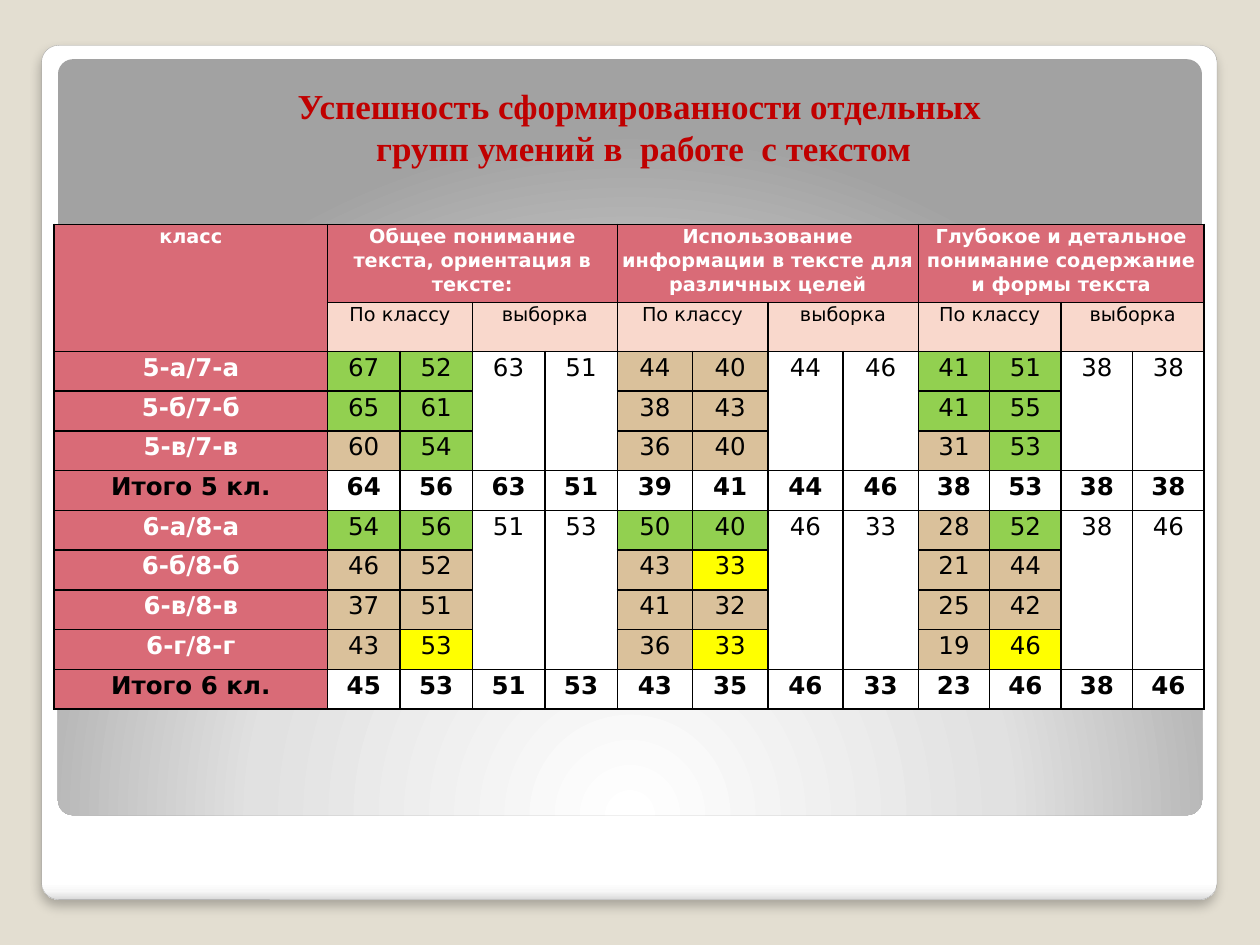
import pptx
import pptx.dml.color
import pptx.enum.shapes
import pptx.enum.text
import pptx.oxml
import pptx.oxml.ns
import pptx.util

Inches = pptx.util.Inches
CENTER = pptx.enum.text.PP_ALIGN.CENTER
COLORS = {
    "page": "E3DED1", "edge": "A4A4A4", "title": "C00000",
    "rose": "D96B77", "pale": "F9D8CC", "white": "FFFFFF", "black": "000000",
    "green": "92D050", "tan": "DAC19B", "yellow": "FFFF00",
}
RGB = {name: pptx.dml.color.RGBColor.from_string(code) for name, code in COLORS.items()}
NAMESPACE = pptx.oxml.ns.nsdecls("a")


def add_panel(page, left, top, width, height, stops, direction):
    panel = page.shapes.add_shape(
        pptx.enum.shapes.MSO_SHAPE.ROUNDED_RECTANGLE,
        Inches(left), Inches(top), Inches(width), Inches(height))
    panel.adjustments[0] = 0.02
    panel.shadow.inherit = False
    panel.line.fill.background()
    panel.fill.background()
    stop_xml = "".join(
        f'<a:gs pos="{position * 1000}"><a:srgbClr val="{color}"/></a:gs>'
        for position, color in stops)
    gradient = pptx.oxml.parse_xml(
        f'<a:gradFill {NAMESPACE} rotWithShape="1"><a:gsLst>{stop_xml}</a:gsLst>{direction}</a:gradFill>')
    properties = panel.element.spPr
    properties.replace(properties.find(pptx.oxml.ns.qn("a:noFill")), gradient)
    return panel


def write_cell(cell, text, fill, size, color="black", bold=False):
    cell.fill.solid()
    cell.fill.fore_color.rgb = RGB[fill]
    cell.margin_left = cell.margin_right = Inches(0.01)
    cell.margin_top = cell.margin_bottom = 0
    cell.text = text
    para = cell.text_frame.paragraphs[0]
    para.alignment = CENTER
    para.line_spacing = 1.07
    para.font.name = "DejaVu Sans"
    para.font.size = pptx.util.Pt(size)
    para.font.bold = bold
    para.font.color.rgb = RGB[color]


deck = pptx.Presentation()
deck.slide_width = Inches(10)
deck.slide_height = Inches(7.5)
page = deck.slides.add_slide(deck.slide_layouts[5])
page.background.fill.solid()
page.background.fill.fore_color.rgb = RGB["page"]

card = add_panel(
    page, 0.33, 0.36, 9.33, 6.78,
    [(0, "FFFFFF"), (98, "FFFFFF"), (99, "F7F7F7"), (100, "DADADA")],
    '<a:lin ang="5400000" scaled="0"/>')
card.line.color.rgb = RGB["edge"]
card.line.width = pptx.util.Pt(0.16)
card.element.spPr.find(pptx.oxml.ns.qn("a:effectLst")).append(pptx.oxml.parse_xml(
    f'<a:outerShdw {NAMESPACE} blurRad="76200" dist="50800" dir="5400000" rotWithShape="0">'
    '<a:srgbClr val="000000"><a:alpha val="25000"/></a:srgbClr></a:outerShdw>'))
add_panel(
    page, 0.46, 0.47, 9.08, 6,
    [(0, "FFFFFF"), (55, "E1E1E1"), (100, "A2A2A2")],
    '<a:path path="circle"><a:fillToRect l="50000" t="175000" r="50000" b="-75000"/></a:path>')

groups = [
    ("Общее понимание текста, ориентация в тексте:", 2.3),
    ("Использование информации в тексте для различных целей", 2.39),
    ("Глубокое и детальное понимание содержание и формы текста", 2.27),
]
fills = {"g": "green", "t": "tan", "y": "yellow", "w": "white"}
results = [
    ("5-а/7-а", "g67 g52 w63 w51 t44 t40 w44 w46 g41 g51 w38 w38"),
    ("5-б/7-б", "g65 g61 - - t38 t43 - - g41 g55 - -"),
    ("5-в/7-в", "t60 g54 - - t36 t40 - - t31 g53 - -"),
    ("Итого 5 кл.", "w64 w56 w63 w51 w39 w41 w44 w46 w38 w53 w38 w38"),
    ("6-а/8-а", "g54 g56 w51 w53 g50 g40 w46 w33 t28 g52 w38 w46"),
    ("6-б/8-б", "t46 t52 - - t43 y33 - - t21 t44 - -"),
    ("6-в/8-в", "t37 t51 - - t41 t32 - - t25 t42 - -"),
    ("6-г/8-г", "t43 y53 - - t36 y33 - - t19 y46 - -"),
    ("Итого 6 кл.", "w45 w53 w51 w53 w43 w35 w46 w33 w23 w46 w38 w46"),
]

table = page.shapes.add_table(
    11, 13, Inches(0.43), Inches(1.78), Inches(9.13), Inches(3.85)).table
widths = [2.17] + [width / 4 for _, width in groups for _ in range(4)]
for column, width in zip(table.columns, widths):
    column.width = Inches(width)
for row, height in zip(table.rows, [0.62, 0.39] + [2.84 / 9] * 9):
    row.height = Inches(height)

table.cell(0, 0).merge(table.cell(1, 0))
write_cell(table.cell(0, 0), "класс", "rose", 11, "white", True)
for group, (heading, _) in enumerate(groups):
    first = 1 + 4 * group
    table.cell(0, first).merge(table.cell(0, first + 3))
    write_cell(table.cell(0, first), heading, "rose", 11, "white", True)
    for column, label in ((first, "По классу"), (first + 2, "выборка")):
        table.cell(1, column).merge(table.cell(1, column + 1))
        write_cell(table.cell(1, column), label, "pale", 11)
    for column in (first + 2, first + 3):
        for top, bottom in ((2, 4), (6, 9)):
            table.cell(top, column).merge(table.cell(bottom, column))

for row, (label, scores) in enumerate(results, start=2):
    total = label.startswith("Итого")
    write_cell(table.cell(row, 0), label, "rose", 14, "black" if total else "white", True)
    for column, score in enumerate(scores.split(), start=1):
        if score != "-":
            write_cell(table.cell(row, column), score[1:], fills[score[0]], 14, bold=total)

for cell in table.iter_cells():
    cell_properties = cell._tc.get_or_add_tcPr()
    for position, side in enumerate(("lnL", "lnR", "lnT", "lnB")):
        cell_properties.insert(position, pptx.oxml.parse_xml(
            f'<a:{side} {NAMESPACE} w="12700"><a:solidFill>'
            f'<a:srgbClr val="{COLORS["black"]}"/></a:solidFill></a:{side}>'))

title = page.shapes.title
page.shapes.element.append(title.element)
title.left, title.top = Inches(0.98), Inches(0.62)
title.width, title.height = Inches(8.19), Inches(0.77)
title.text_frame.text = "Успешность сформированности отдельных\n групп умений в  работе  с текстом"
title.text_frame.word_wrap = True
title.text_frame.auto_size = pptx.enum.text.MSO_AUTO_SIZE.SHAPE_TO_FIT_TEXT
title.text_frame.vertical_anchor = pptx.enum.text.MSO_ANCHOR.MIDDLE
for para in title.text_frame.paragraphs:
    para.alignment = CENTER
    para.font.name = "Times New Roman"
    para.font.size = pptx.util.Pt(20)
    para.font.bold = True
    para.font.color.rgb = RGB["title"]

deck.save("out.pptx")
